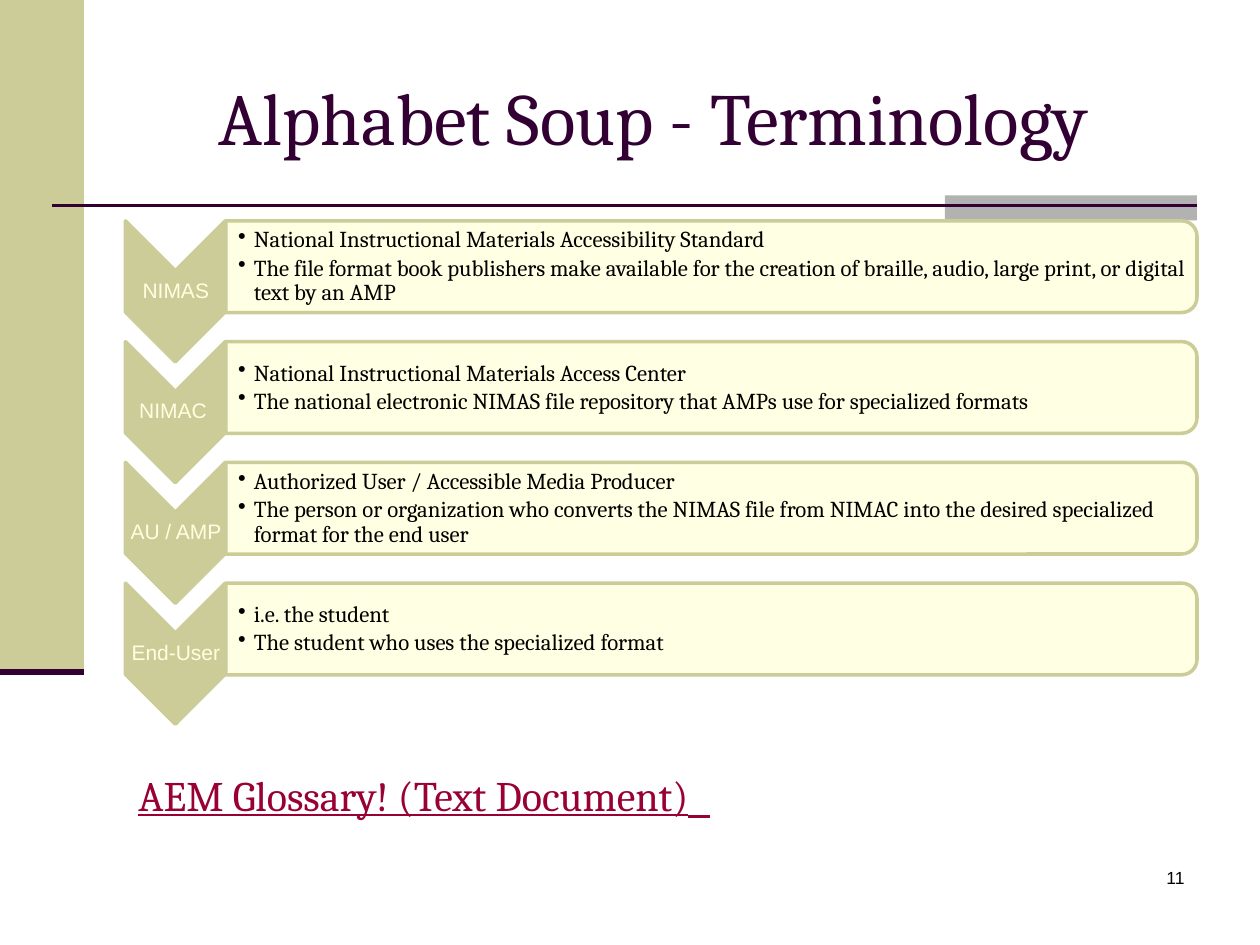
from typing import NamedTuple

from lxml.etree import SubElement
from pptx import Presentation
from pptx.dml.color import RGBColor
from pptx.enum.shapes import MSO_CONNECTOR, MSO_SHAPE
from pptx.enum.text import MSO_ANCHOR, PP_ALIGN
from pptx.oxml.ns import qn
from pptx.util import Pt

COLORS = {
    "plum": "330033", "sand": "CCCC99", "cream": "FFFFE1",
    "gray": "B2B2B2", "wine": "990033", "black": "000000",
}
ROW_PITCH = 69
TIGHT = (1, 1, 1, 1)


class Term(NamedTuple):
    label: str
    points: tuple[str, ...]


TERMS = [
    Term("NIMAS", (
        "National Instructional Materials Accessibility Standard",
        "The file format book publishers make available for the creation of "
        "braille, audio, large print, or digital text by an AMP")),
    Term("NIMAC ", (
        "National Instructional Materials Access Center",
        "The national electronic NIMAS file repository that AMPs use for "
        "specialized formats")),
    Term("AU / AMP ", (
        "Authorized User / Accessible Media Producer",
        "The person or organization who converts the NIMAS file from NIMAC "
        "into the desired specialized format for the end user")),
    Term("End-User", (
        "i.e. the student",
        "The student who uses the specialized format")),
]


def color(name: str) -> RGBColor:
    return RGBColor.from_string(COLORS[name])


def set_all(target, values: dict) -> None:
    for name, value in values.items():
        setattr(target, name, value)


def add_block(page, kind, left, top, width, height, fill, outline=None):
    block = page.shapes.add_shape(kind, Pt(left), Pt(top), Pt(width), Pt(height))
    block.shadow.inherit = False
    block.fill.solid()
    block.fill.fore_color.rgb = color(fill)
    if outline:
        block.line.color.rgb = color(outline)
        block.line.width = Pt(2)
    else:
        block.line.fill.background()
    return block


def add_turned_block(page, kind, left, top, width, height, fill):
    """Place a block turned by 90 degrees so that it covers the given area."""
    shift = (width - height) / 2
    block = add_block(page, kind, left + shift, top - shift, height, width, fill, "sand")
    block.rotation = 90
    return block


def add_rule(page, x1, x2, y, weight) -> None:
    rule = page.shapes.add_connector(MSO_CONNECTOR.STRAIGHT, Pt(x1), Pt(y), Pt(x2), Pt(y))
    rule.line.color.rgb = color("plum")
    rule.line.width = Pt(weight)
    SubElement(rule.element.spPr, qn("a:effectLst"))


def add_span(para, text: str, font: str, size: float, ink: str, underline=False) -> None:
    span = para.add_run()
    span.text = text
    set_all(span.font, {"name": font, "size": Pt(size), "underline": underline})
    span.font.color.rgb = color(ink)


def add_box(page, left, top, width, height, anchor=MSO_ANCHOR.TOP,
            margins=(7.2, 3.6, 7.2, 3.6)):
    box = page.shapes.add_textbox(Pt(left), Pt(top), Pt(width), Pt(height))
    sides = ("margin_left", "margin_top", "margin_right", "margin_bottom")
    set_all(box.text_frame, {
        "word_wrap": True, "vertical_anchor": anchor,
        **{side: Pt(gap) for side, gap in zip(sides, margins)},
    })
    return box.text_frame


def add_bullet(para) -> None:
    properties = para._p.get_or_add_pPr()
    properties.set("marL", str(Pt(9)))
    properties.set("indent", str(-Pt(9)))
    SubElement(properties, qn("a:buChar")).set("char", "•")


def add_term(page, term: Term, top: float) -> None:
    # Arrow and its label
    add_turned_block(page, MSO_SHAPE.CHEVRON, 71.7, top, 57, 80.6, "sand")
    frame = add_box(page, 72, top + 28, 57, 24.5, MSO_ANCHOR.MIDDLE, TIGHT)
    para = frame.paragraphs[0]
    set_all(para, {"alignment": PP_ALIGN.CENTER, "line_spacing": 0.9})
    add_span(para, term.label, "Arial", 12, "cream")

    # Panel and its points
    panel = add_turned_block(page, MSO_SHAPE.ROUND_2_SAME_RECTANGLE,
                             129, top, 555, 52.4, "cream")
    tint = panel.element.spPr.find(qn("a:solidFill"))[0]
    SubElement(tint, qn("a:alpha")).set("val", "90000")
    frame = add_box(page, 129, top + 2.6, 553, 47.5, MSO_ANCHOR.MIDDLE, (7.2, 1, 1, 1))
    for index, point in enumerate(term.points):
        para = frame.add_paragraph() if index else frame.paragraphs[0]
        set_all(para, {"line_spacing": 0.9, "space_after": Pt(2)})
        add_bullet(para)
        add_span(para, point, "Cambria", 13, "black")


def main() -> None:
    deck = Presentation()
    set_all(deck, {"slide_width": Pt(720), "slide_height": Pt(540)})
    page = deck.slides.add_slide(deck.slide_layouts[6])

    # Frame of the page
    add_block(page, MSO_SHAPE.RECTANGLE, 0, 0, 48, 384, "sand")
    add_block(page, MSO_SHAPE.RECTANGLE, 540, 111.6, 144, 14.4, "gray")
    add_rule(page, 30, 684, 117.6, 1.5)
    add_rule(page, 0, 48, 384, 3.5)

    # Title
    para = add_box(page, 72, 21.6, 612, 90, MSO_ANCHOR.MIDDLE).paragraphs[0]
    para.alignment = PP_ALIGN.CENTER
    add_span(para, "Alphabet Soup - Terminology ", "Cambria", 42, "plum")

    # Glossary line
    para = add_box(page, 72, 432, 516, 50.4).paragraphs[0]
    para.space_before = Pt(5)
    add_span(para, "AEM Glossary! (Text Document)", "Cambria", 24, "wine", True)
    add_span(para, "  ", "Cambria", 28, "wine", True)

    # Page number
    para = add_box(page, 534, 492, 150, 36).paragraphs[0]
    para.alignment = PP_ALIGN.RIGHT
    add_span(para, "11", "Arial", 10, "black")

    # Terms
    for row, term in enumerate(TERMS):
        add_term(page, term, 126.2 + row * ROW_PITCH)

    deck.save("out.pptx")


if __name__ == "__main__":
    main()
